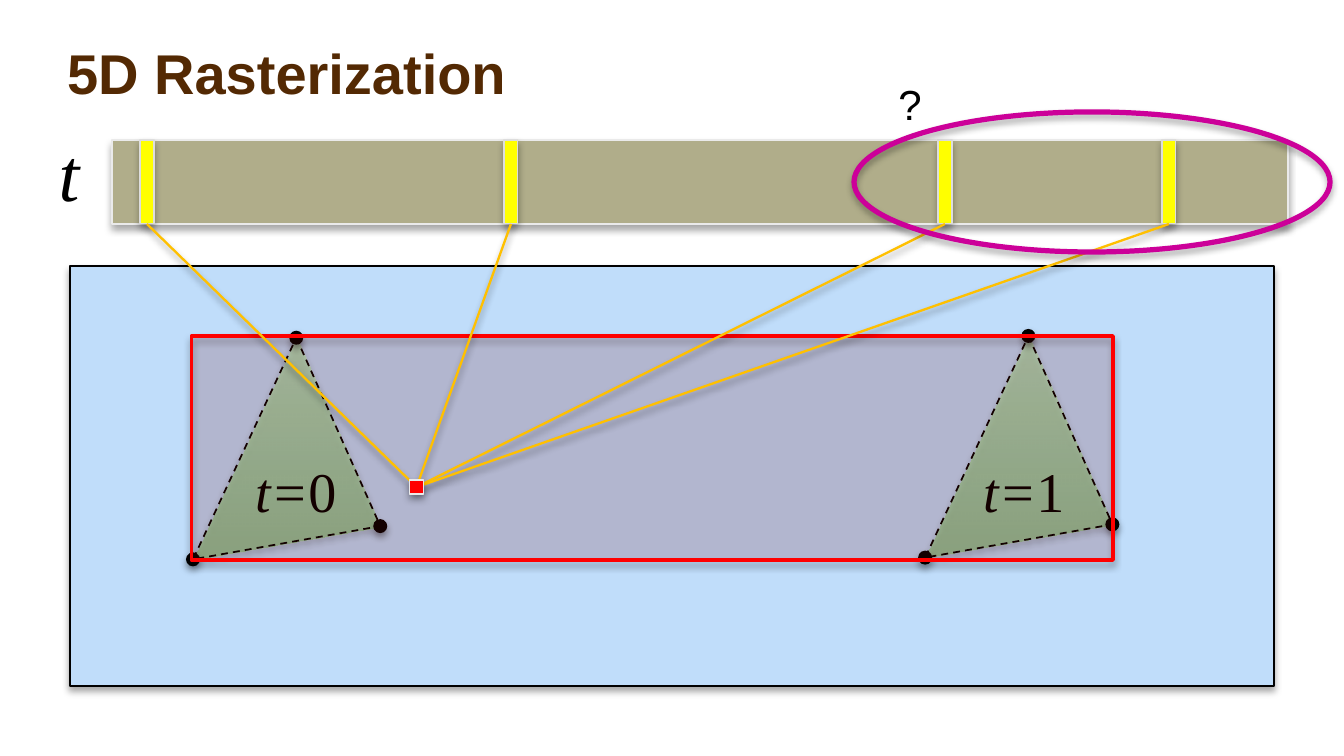
"""Build the 5D Rasterization slide: time samples and a moving triangle's bounds."""
from lxml import etree
from pptx import Presentation
from pptx.dml.color import RGBColor
from pptx.enum.dml import MSO_LINE
from pptx.enum.shapes import MSO_CONNECTOR, MSO_SHAPE
from pptx.enum.text import MSO_ANCHOR, MSO_AUTO_SIZE, PP_ALIGN
from pptx.oxml.ns import qn
from pptx.util import Pt

RECT, OVAL = MSO_SHAPE.RECTANGLE, MSO_SHAPE.OVAL
STRAIGHT, DASH = MSO_CONNECTOR.STRAIGHT, MSO_LINE.DASH
TOP, MIDDLE, LEFT = MSO_ANCHOR.TOP, MSO_ANCHOR.MIDDLE, PP_ALIGN.LEFT
NO_FIT = MSO_AUTO_SIZE.NONE


class Theme:
    title, ink = "532903", "000000"
    field, timeline, sample = "C0DDFA", "B0AD8A", "FFFF00"
    edge, sample_edge = "EAEAEA", "DDDDDD"
    bounds, pixel, ray, ring = "990000", "FF0000", "FFC000", "CC0099"
    triangle = (("BBFFA6", 49), ("73CC48", 42))
    sans, serif = "Arial", "Times New Roman"
    title_size, label_size, axis_size, mark_size = 24, 24, 32, 18


def add_shadow(s, alpha=35, dist=1.8):
    effects = etree.SubElement(s._element.spPr, qn("a:effectLst"))
    shadow = etree.SubElement(effects, qn("a:outerShdw"), blurRad=str(Pt(3.1)),
                              dist=str(Pt(dist)), dir="5400000", rotWithShape="0")
    color = etree.SubElement(shadow, qn("a:srgbClr"), val=Theme.ink)
    etree.SubElement(color, qn("a:alpha"), val=str(alpha * 1000))


def add_box(kind, x, y, w, h, fill=None, line=None, width=0.75):
    s = slide.shapes.add_shape(kind, Pt(x), Pt(y), Pt(w), Pt(h))
    if fill:
        s.fill.solid()
        s.fill.fore_color.rgb = RGBColor.from_string(fill)
    else:
        s.fill.background()
    if line:
        s.line.color.rgb = RGBColor.from_string(line)
        s.line.width = Pt(width)
    else:
        s.line.fill.background()
    add_shadow(s)
    return s


prs = Presentation()
prs.slide_width, prs.slide_height = Pt(576), Pt(324)
slide = prs.slides.add_slide(prs.slide_layouts[5])

title = slide.shapes.title
title.left, title.top, title.width, title.height = Pt(23), Pt(13.5), Pt(500), Pt(34.5)
tf = title.text_frame
tf.text = "5D Rasterization"
tf.auto_size, tf.vertical_anchor = NO_FIT, MIDDLE
tf.margin_left = tf.margin_right = Pt(5.75)
tf.margin_top = tf.margin_bottom = Pt(3)
p = tf.paragraphs[0]
p.alignment = LEFT
p.font.name, p.font.size, p.font.bold = Theme.sans, Pt(Theme.title_size), True
p.font.color.rgb = RGBColor.from_string(Theme.title)

add_box(RECT, 30, 114, 516, 180, Theme.field, Theme.ink)

corners = [(127, 144.75), (163, 225.5), (82.75, 239.75)]
triangles = [[(x + dx, y + dy) for x, y in corners]
             for dx, dy in ((0, 0), (313.75, -0.75))]
for points in triangles:
    outline = [(Pt(x), Pt(y)) for x, y in points]
    builder = slide.shapes.build_freeform(*outline[0])
    builder.add_line_segments(outline[1:], close=True)
    s = builder.convert_to_shape()
    s.fill.gradient()
    s.fill.gradient_angle = 270
    for stop, (color, alpha) in zip(s.fill.gradient_stops, Theme.triangle):
        stop.color.rgb = RGBColor.from_string(color)
        rgb = stop._gs.find(qn("a:srgbClr"))
        etree.SubElement(rgb, qn("a:alpha"), val=str(alpha * 1000))
    for stop, position in zip(s.fill.gradient_stops, (0, 1)):
        stop.position = position
    s.line.color.rgb = RGBColor.from_string(Theme.ink)
    s.line.width, s.line.dash_style = Pt(0.75), DASH
    add_shadow(s)

labels = [
    ("t=", "0", 102.25, 192.25, 49.5, 36.5, Theme.serif, Theme.label_size),
    ("t=", "1", 414.25, 192.25, 49.5, 36.5, Theme.serif, Theme.label_size),
    ("t", "", 18, 51, 23.5, 46, Theme.serif, Theme.axis_size),
    ("", "?", 378, 30.25, 24.5, 29, Theme.sans, Theme.mark_size),
]
for italic, upright, x, y, w, h, font, size in labels:
    s = slide.shapes.add_textbox(Pt(x), Pt(y), Pt(w), Pt(h))
    tf = s.text_frame
    tf.word_wrap, tf.vertical_anchor = False, TOP
    p = tf.paragraphs[0]
    for text, slanted in ((italic, True), (upright, False)):
        if text:
            r = p.add_run()
            r.text, r.font.italic = text, slanted
    p.font.name, p.font.size = font, Pt(size)
    p.font.color.rgb = RGBColor.from_string(Theme.ink)

for points in triangles:
    for x, y in points:
        add_box(OVAL, x - 3, y - 3, 6, 6, Theme.ink)

add_box(RECT, 48, 60, 504, 36, Theme.timeline, Theme.edge)
samples = [add_box(RECT, x, 60, 6, 36, Theme.sample, Theme.sample_edge, 0.5)
           for x in (60, 216, 402, 498)]

bounds = add_box(RECT, 82, 144, 395, 96, Theme.bounds, Theme.pixel, 1.5)
rgb = bounds._element.spPr.find(qn("a:solidFill")).find(qn("a:srgbClr"))
etree.SubElement(rgb, qn("a:alpha"), val="13000")

pixel_x, pixel_y = 178.5, 208.75
for sample in samples:
    s = slide.shapes.add_connector(STRAIGHT, Pt(pixel_x), Pt(pixel_y), 0, 0)
    s.end_connect(sample, 2)
    s.line.color.rgb = RGBColor.from_string(Theme.ray)
    s.line.width = Pt(1)
    add_shadow(s, 38, 1.6)

add_box(RECT, pixel_x - 3, pixel_y - 3, 6, 6, Theme.pixel, Theme.edge)
add_box(OVAL, 366, 48, 204, 60, line=Theme.ring, width=2.25)

prs.save("out.pptx")
